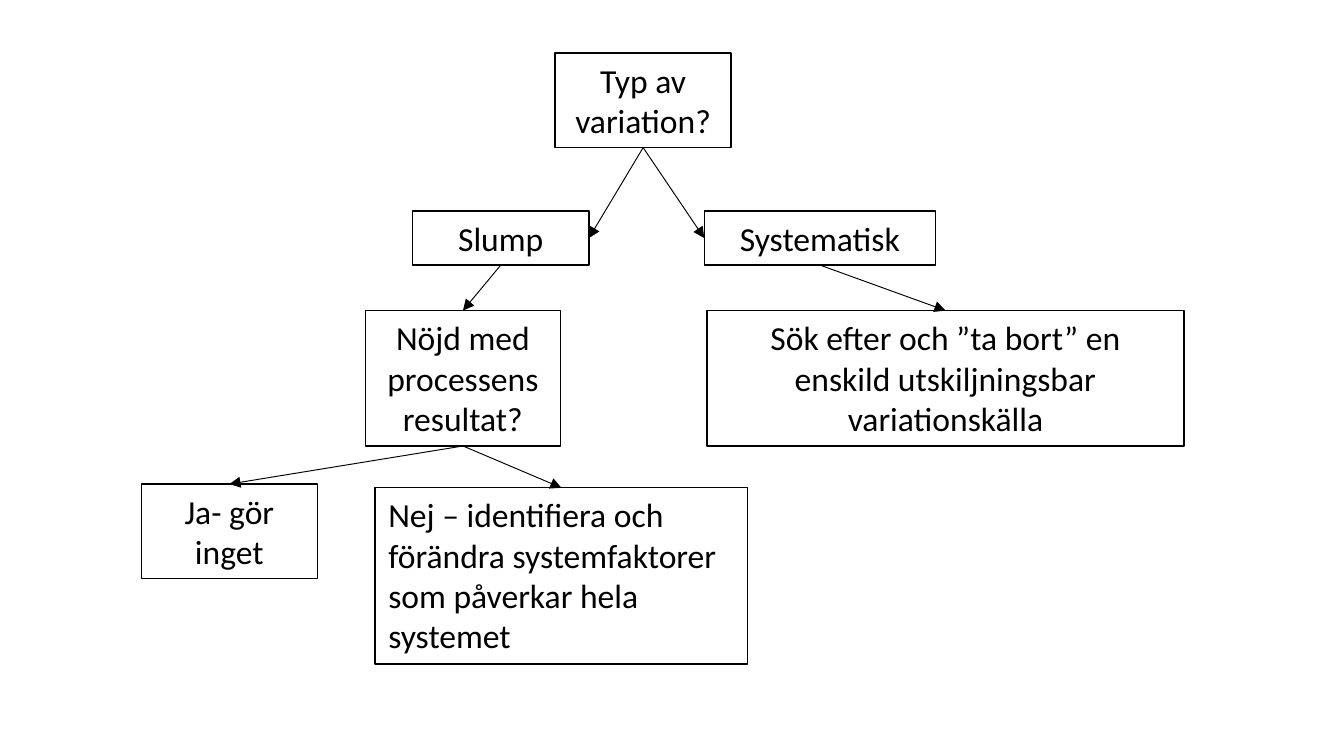
import pptx
import pptx.dml.color
import pptx.enum.shapes
import pptx.enum.text
import pptx.oxml.ns
import pptx.util
from lxml import etree

Cm, Pt = pptx.util.Cm, pptx.util.Pt
ALIGN = pptx.enum.text.PP_ALIGN
BLACK = pptx.dml.color.RGBColor(0x00, 0x00, 0x00)
LINE_HEIGHT, PADDING = 0.77, 0.25  # cm, for 18 pt text

# Boxes: text, left, top, width (cm), lines of text, alignment
BOXES = {
    "type": ("Typ av variation?", 10.49, 1.0, 3.33, 2, ALIGN.CENTER),
    "satisfied": ("Nöjd med processens resultat?", 6.91, 5.87, 3.68, 3, ALIGN.CENTER),
    "random": ("Slump", 7.8, 3.99, 3.33, 1, ALIGN.CENTER),
    "systematic": ("Systematisk", 13.31, 3.99, 4.37, 1, ALIGN.CENTER),
    "no": ("Nej – identifiera och förändra systemfaktorer som påverkar hela systemet",
           7.09, 9.22, 7.04, 4, ALIGN.LEFT),
    "yes": ("Ja- gör inget", 2.67, 9.15, 3.33, 2, ALIGN.CENTER),
    "search": ("Sök efter och ”ta bort” en enskild utskiljningsbar variationskälla",
               13.36, 5.87, 9.02, 3, ALIGN.CENTER),
}

# Connection sites of a rectangle
TOP, LEFT, BOTTOM, RIGHT = range(4)

# Arrows: from the bottom of one box to a side of another
ARROWS = [
    ("type", "random", RIGHT),
    ("type", "systematic", LEFT),
    ("systematic", "search", TOP),
    ("random", "satisfied", TOP),
    ("satisfied", "no", TOP),
    ("satisfied", "yes", TOP),
]


def add_box(page, text, left, top, width, lines, alignment):
    height = PADDING + lines * LINE_HEIGHT
    box = page.shapes.add_shape(pptx.enum.shapes.MSO_SHAPE.RECTANGLE,
                                Cm(left), Cm(top), Cm(width), Cm(height))
    box.shadow.inherit = False
    box.fill.background()
    box.line.color.rgb = BLACK
    box.line.width = Pt(0.75)
    frame = box.text_frame
    frame.word_wrap = True
    frame.auto_size = pptx.enum.text.MSO_AUTO_SIZE.SHAPE_TO_FIT_TEXT
    frame.vertical_anchor = pptx.enum.text.MSO_ANCHOR.TOP
    para = frame.paragraphs[0]
    para.alignment = alignment
    span = para.add_run()
    span.text = text
    span.font.name = "Calibri"
    span.font.size = Pt(18)
    span.font.color.rgb = BLACK
    return box


def add_arrow(page, start, end, side):
    arrow = page.shapes.add_connector(pptx.enum.shapes.MSO_CONNECTOR.STRAIGHT, 0, 0, 0, 0)
    arrow.begin_connect(start, BOTTOM)
    arrow.end_connect(end, side)
    arrow.line.color.rgb = BLACK
    arrow.line.width = Pt(0.5)
    # Arrowhead, and no shadow
    qn = pptx.oxml.ns.qn
    etree.SubElement(arrow.line._get_or_add_ln(), qn("a:tailEnd"), type="triangle")
    etree.SubElement(arrow._element.spPr, qn("a:effectLst"))


def main():
    deck = pptx.Presentation()
    deck.slide_width, deck.slide_height = Cm(25.4), Cm(14.29)
    page = deck.slides.add_slide(deck.slide_layouts[6])
    boxes = {name: add_box(page, *content) for name, content in BOXES.items()}
    for start, end, side in ARROWS:
        add_arrow(page, boxes[start], boxes[end], side)
    deck.save("out.pptx")


if __name__ == "__main__":
    main()
